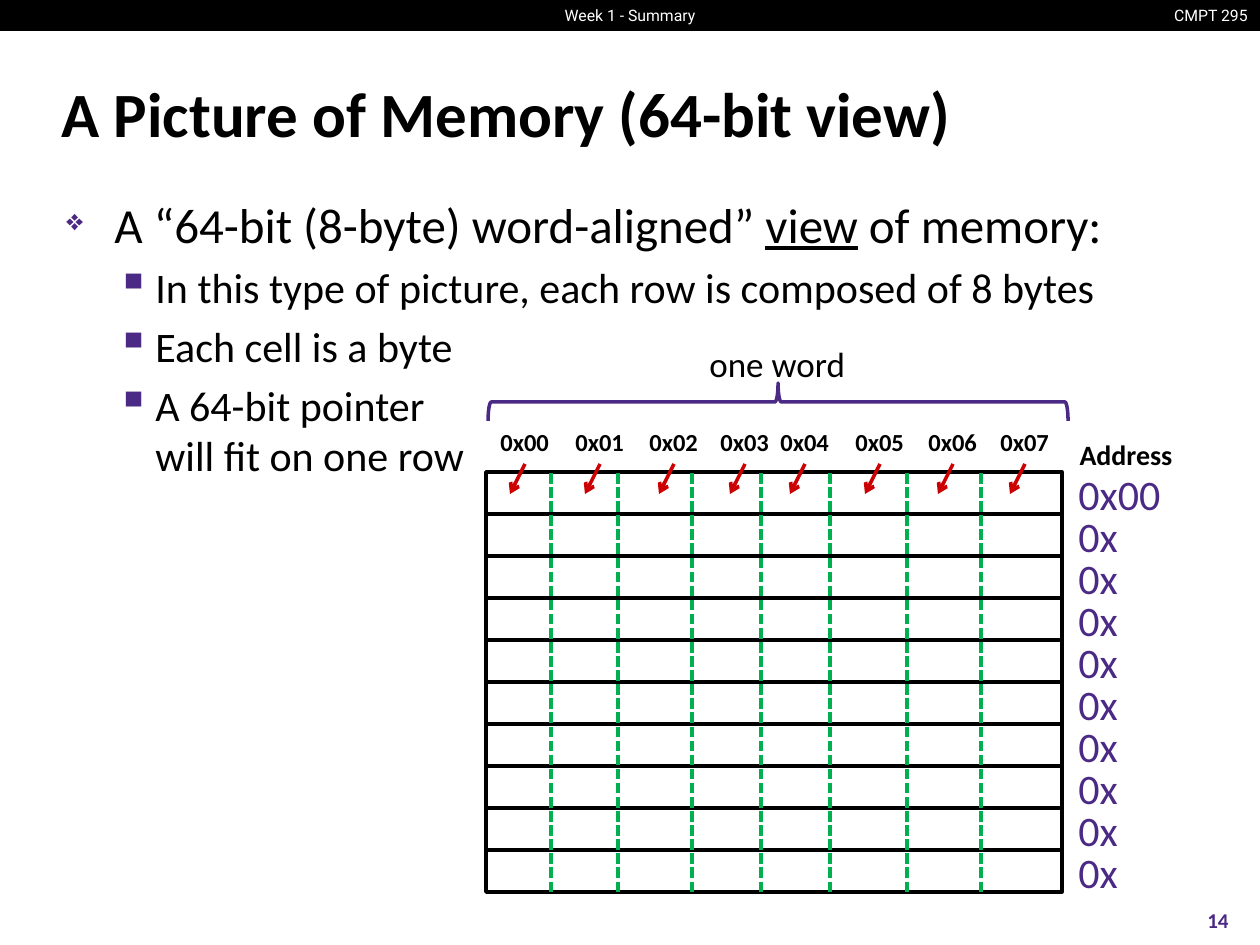
"""Build a slide that shows memory as rows of eight bytes."""
from lxml import etree
from pptx import Presentation
from pptx import util as u
from pptx.dml.color import RGBColor
from pptx.enum import dml, shapes, text
from pptx.oxml import ns

PX = 914400 / 126
HUES = {"ink": "000000", "paper": "FFFFFF", "plum": "4B2A85", "leaf": "00B050", "red": "CC0000"}
LEFT, MID, RIGHT = text.PP_ALIGN.LEFT, text.PP_ALIGN.CENTER, text.PP_ALIGN.RIGHT

TITLE = "A Picture of Memory (64-bit view)"
LEAD = ["A “64-bit (8-byte) word-aligned” ", "view", " of memory:"]
POINTS = [
    "In this type of picture, each row is composed of 8 bytes",
    "Each cell is a byte",
    "A 64-bit pointer \vwill fit on one row",
]
BYTES = [("0x00", 488), ("0x01", 563), ("0x02", 637), ("0x03", 708),
         ("0x04", 768), ("0x05", 843), ("0x06", 916), ("0x07", 988)]
CUTS = [551, 618, 692, 761, 830, 907, 981]
ROWS = ["0x00"] + ["0x"] * 9
GRID = {"x": 486, "y": 472, "w": 576, "h": 42}
LEVELS = [{"size": 28, "left": 48, "hang": 48, "mark": "❖", "pct": 60},
          {"size": 24, "left": 89, "hang": 39, "mark": "▪", "pct": 110}]


def emu(*nums):
    return [round(n * PX) for n in nums]


def hue(name):
    return RGBColor.from_string(HUES[name])


def style(para, size, color="ink", bold=False, face="Calibri", align=LEFT):
    para.alignment = align
    for run in para.runs:
        font = run.font
        font.size, font.bold, font.name = u.Pt(size), bold, face
        font.color.rgb = hue(color)


def label(slide, words, box, size, anchor=text.MSO_ANCHOR.TOP, **look):
    frame = slide.shapes.add_textbox(*emu(*box)).text_frame
    frame.word_wrap = False
    frame.vertical_anchor = anchor
    frame.text = words
    style(frame.paragraphs[0], size, **look)


def block(slide, kind, box, fill=None, line=None):
    shape = slide.shapes.add_shape(kind, *emu(*box))
    shape.shadow.inherit = False
    if fill:
        shape.fill.solid()
        shape.fill.fore_color.rgb = hue(fill)
    else:
        shape.fill.background()
    if line:
        shape.line.color.rgb = hue(line)
        shape.line.width = u.Pt(2)
    else:
        shape.line.fill.background()
    return shape


def stroke(slide, ends, color):
    line = slide.shapes.add_connector(shapes.MSO_CONNECTOR.STRAIGHT, *emu(*ends))
    line.line.color.rgb = hue(color)
    line.line.width = u.Pt(2)
    etree.SubElement(line._element.spPr, ns.qn("a:effectLst"))
    return line


def indent(para, left, hang):
    props = para._p.get_or_add_pPr()
    props.set("marL", str(emu(left)[0]))
    props.set("indent", str(-emu(hang)[0]))
    return props


def bullet(para, level):
    look = LEVELS[level]
    para.level = level
    style(para, look["size"])
    props = indent(para, look["left"], look["hang"])
    gap = etree.SubElement(props, ns.qn("a:spcBef"))
    etree.SubElement(gap, ns.qn("a:spcPct"), val="20000")
    tint = etree.SubElement(props, ns.qn("a:buClr"))
    etree.SubElement(tint, ns.qn("a:srgbClr"), val=HUES["plum"])
    etree.SubElement(props, ns.qn("a:buSzPct"), val=str(look["pct"] * 1000))
    etree.SubElement(props, ns.qn("a:buChar"), char=look["mark"])


def heads(slide):
    block(slide, shapes.MSO_SHAPE.RECTANGLE, (0, 0, 1260, 31), "ink")
    for words, box, align in [("CMPT 295", (1158, 0, 102, 31), RIGHT),
                              ("Week 1 - Summary", (541, 0, 178, 31), MID)]:
        label(slide, words, box, 9, color="paper", face="Roboto", align=align)
    title = slide.shapes.title
    title.left, title.top, title.width, title.height = emu(49, 60, 1158, 105)
    frame = title.text_frame
    frame.text = TITLE
    frame.vertical_anchor = text.MSO_ANCHOR.MIDDLE
    style(frame.paragraphs[0], 36, bold=True)
    indent(frame.paragraphs[0], 16, 16)


def body(slide):
    frame = slide.shapes.add_textbox(*emu(54, 188, 1153, 685)).text_frame
    frame.word_wrap = True
    lead = frame.paragraphs[0]
    for part in LEAD:
        run = lead.add_run()
        run.text = part
        run.font.underline = part == "view"
    bullet(lead, 0)
    for point in POINTS:
        para = frame.add_paragraph()
        para.text = point
        bullet(para, 1)


def memory(slide):
    x, y, w, h = GRID.values()
    for i in range(len(ROWS)):
        block(slide, shapes.MSO_SHAPE.RECTANGLE, (x, y + i * h, w, h), "paper", "ink")
    for cut in CUTS:
        line = stroke(slide, (cut, y + 1, cut, y + len(ROWS) * h), "leaf")
        line.line.dash_style = dml.MSO_LINE.SQUARE_DOT
    for words, left in BYTES:
        label(slide, words, (left, 421, 74, 43), 14, bold=True)
        arrow = stroke(slide, (left + 37, 464, left + 22, 494), "red")
        etree.SubElement(arrow.line._get_or_add_ln(), ns.qn("a:tailEnd"), type="arrow")
    brace = block(slide, shapes.MSO_SHAPE.LEFT_BRACE, (759, 112, 38, 580), line="plum")
    brace.rotation = 90
    label(slide, "one word", (697, 336, 163, 55), 20)
    for i, words in enumerate(ROWS):
        wide = 108 if len(words) > 2 else 66
        label(slide, words, (1066, y - 10 + i * h, wide, 63), 24, color="plum")
    label(slide, "Address", (1066, 431, 120, 47), 16, bold=True, align=MID)


def main():
    deck = Presentation()
    deck.slide_width, deck.slide_height = emu(1260, 945)
    slide = deck.slides.add_slide(deck.slide_layouts[5])
    heads(slide)
    body(slide)
    label(slide, "14", (1176, 895, 84, 50), 12, text.MSO_ANCHOR.MIDDLE,
          color="plum", bold=True, align=MID)
    memory(slide)
    deck.save("out.pptx")


if __name__ == "__main__":
    main()
